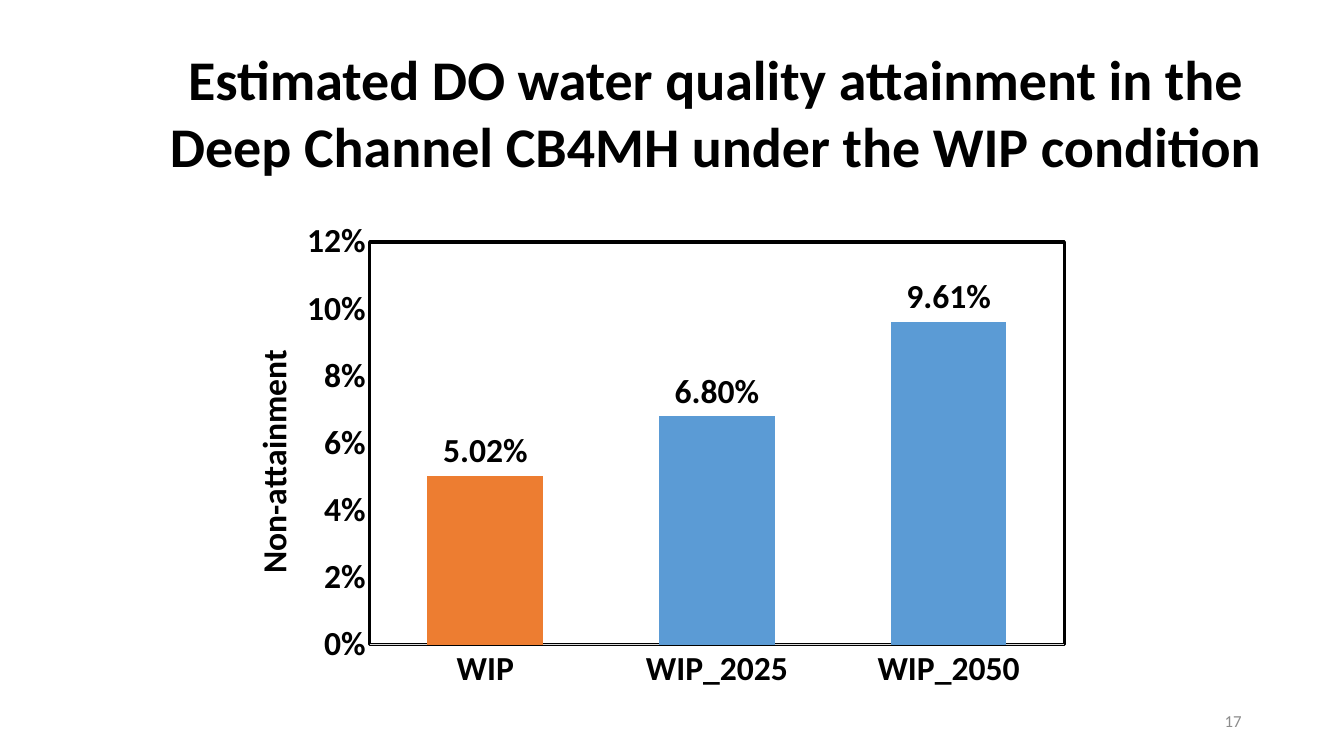
from lxml import etree
from pptx import Presentation
from pptx.chart.data import CategoryChartData
from pptx.dml.color import RGBColor
from pptx.enum.chart import XL_CHART_TYPE, XL_LABEL_POSITION, XL_TICK_MARK
from pptx.enum.text import MSO_ANCHOR, PP_ALIGN
from pptx.oxml import parse_xml
from pptx.oxml.ns import nsdecls, qn
from pptx.util import Pt

COLUMN = XL_CHART_TYPE.COLUMN_CLUSTERED
OUTSIDE = XL_LABEL_POSITION.OUTSIDE_END
NO_TICK = XL_TICK_MARK.NONE
CENTER, RIGHT = PP_ALIGN.CENTER, PP_ALIGN.RIGHT
TOP, MIDDLE = MSO_ANCHOR.TOP, MSO_ANCHOR.MIDDLE
FONT = "Calibri"
COLORS = {"text": "000000", "number": "8C8C8C", "base": "ED7D31",
          "future": "5B9BD5", "axis": "D9D9D9", "frame": "000000"}
ATTAINMENT = {"WIP": 0.0502, "WIP_2025": 0.068, "WIP_2050": 0.0961}


def color(name):
    """Return the named colour."""
    return RGBColor.from_string(COLORS[name])


def set_font(font, size=24, bold=True, fill="text"):
    """Apply the typeface, size, weight and colour."""
    font.name, font.size, font.bold = FONT, Pt(size), bold
    font.color.rgb = color(fill)


def add_text(s, box, text, align=CENTER, anchor=TOP, **fmt):
    """Add a wrapped text box."""
    tf = s.shapes.add_textbox(*map(Pt, box)).text_frame
    tf.word_wrap = True
    tf.vertical_anchor = anchor
    p = tf.paragraphs[0]
    p.alignment = align
    r = p.add_run()
    r.text = text
    set_font(r.font, **fmt)


def manual_layout(target, **fractions):
    """Fill the layout of a plot area or title with fractions of the chart."""
    layout = target.find(qn("c:layout"))
    if layout is None:
        layout = etree.Element(qn("c:layout"))
        target.find(qn("c:overlay")).addprevious(layout)
    manual = etree.SubElement(layout, qn("c:manualLayout"))
    if "w" in fractions:
        etree.SubElement(manual, qn("c:layoutTarget"), val="inner")
    for side in ("xMode", "yMode"):
        etree.SubElement(manual, qn("c:" + side), val="edge")
    for key, value in fractions.items():
        etree.SubElement(manual, qn("c:" + key), val=str(value))


def style_axes(chart):
    """Format both axes and the value axis title."""
    for axis in (chart.category_axis, chart.value_axis):
        axis.major_tick_mark = axis.minor_tick_mark = NO_TICK
        axis.has_major_gridlines = False
        set_font(axis.tick_labels.font)
    line = chart.category_axis.format.line
    line.color.rgb = color("axis")
    line.width = Pt(0.75)
    axis = chart.value_axis
    axis.minimum_scale, axis.maximum_scale, axis.major_unit = 0, 0.12, 0.02
    axis.tick_labels.number_format = "0%"
    axis.tick_labels.number_format_is_linked = False
    axis.format.line.fill.background()
    p = axis.axis_title.text_frame.paragraphs[0]
    r = p.add_run()
    r.text = "Non-attainment"
    set_font(r.font)
    body = axis.axis_title.text_frame._txBody.bodyPr
    body.set("rot", "-5400000")
    body.set("vert", "horz")
    manual_layout(axis.axis_title._element, x=0.04, y=0.27)


def add_attainment_chart(s, box):
    """Add the framed column chart of non-attainment."""
    data = CategoryChartData(number_format="0.00%")
    data.categories = list(ATTAINMENT)
    data.add_series("Series 1", list(ATTAINMENT.values()))
    chart = s.shapes.add_chart(COLUMN, *map(Pt, box), data).chart
    chart.has_legend = chart.has_title = False
    set_font(chart.font)
    style_axes(chart)
    plot = chart.plots[0]
    plot.vary_by_categories = False
    plot.gap_width, plot.overlap = 100, -27
    series = plot.series[0]
    for fill, name in ((series.format.fill, "future"),
                       (series.points[0].format.fill, "base")):
        fill.solid()
        fill.fore_color.rgb = color(name)
    labels = series.data_labels
    labels.show_value = True
    labels.number_format = "0.00%"
    labels.number_format_is_linked = False
    labels.position = OUTSIDE
    set_font(labels.font)
    area = chart._chartSpace.chart.plotArea
    if area.find(qn("c:layout")) is None:
        area.insert(0, etree.Element(qn("c:layout")))
    manual_layout(area, x=0.183, y=0.062, w=0.797, h=0.824)
    area.append(parse_xml(
        f'<c:spPr {nsdecls("c", "a")}><a:noFill/><a:ln w="{Pt(2.25)}"><a:solidFill>'
        f'<a:srgbClr val="{COLORS["frame"]}"/></a:solidFill></a:ln></c:spPr>'))


def main():
    """Build and save the slide."""
    prs = Presentation()
    prs.slide_width, prs.slide_height = Pt(960), Pt(540)
    s = prs.slides.add_slide(prs.slide_layouts[6])
    add_text(s, (96, 28, 830, 104.4), "Estimated DO water quality attainment in the "
             "Deep Channel CB4MH under the WIP condition", size=40)
    add_attainment_chart(s, (150, 151.2, 622.8, 349.2))
    add_text(s, (678, 500.5, 216, 28.8), "17", align=RIGHT, anchor=MIDDLE,
             size=12, bold=False, fill="number")
    prs.save("out.pptx")


if __name__ == "__main__":
    main()
